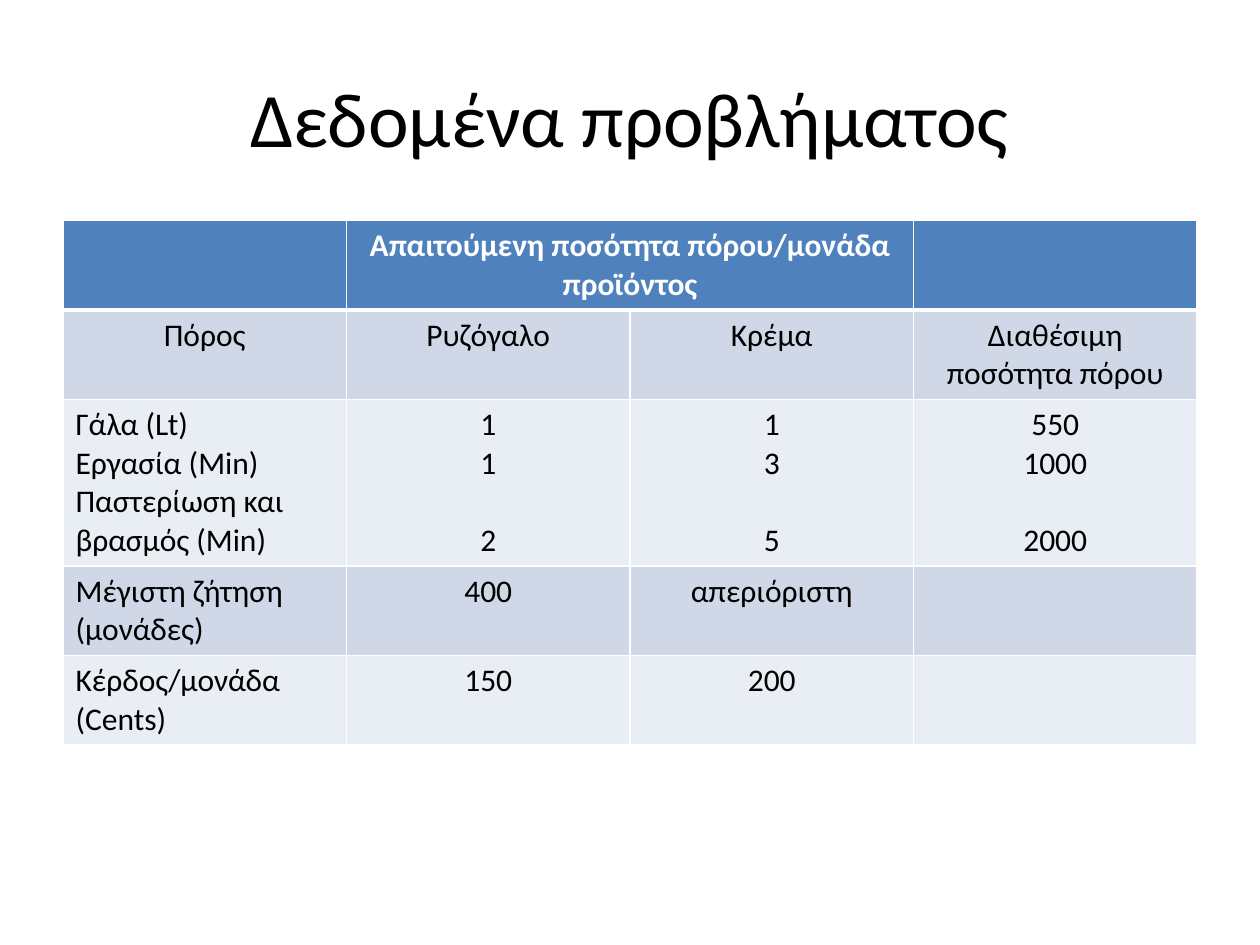
from dataclasses import dataclass

from lxml.etree import SubElement
from pptx import Presentation
from pptx.dml.color import RGBColor
from pptx.enum.text import MSO_ANCHOR, PP_ALIGN
from pptx.oxml.ns import qn
from pptx.util import Inches, Pt


@dataclass(frozen=True)
class Theme:
    font: str = "Calibri"
    title_size: int = 44
    body_size: int = 18
    line_gap: int = 22
    text: str = "000000"
    header_text: str = "FFFFFF"
    header_fill: str = "4F81BD"
    bands: tuple = ("D0D8E8", "E9EDF4")
    border: str = "FFFFFF"
    thin: int = 1
    thick: int = 3


class SlideBuilder:
    def __init__(self, prs, theme):
        self.theme = theme
        self.slide = prs.slides.add_slide(prs.slide_layouts[5])

    def add_run(self, p, text, size, color, bold=False):
        r = p.add_run()
        r.text = text
        r.font.name = self.theme.font
        r.font.size = Pt(size)
        r.font.bold = bold
        r.font.color.rgb = RGBColor.from_string(color)

    def title(self, text, left, top, width, height):
        sp = self.slide.shapes.title
        sp.left, sp.top = Inches(left), Inches(top)
        sp.width, sp.height = Inches(width), Inches(height)
        tf = sp.text_frame
        tf.vertical_anchor = MSO_ANCHOR.MIDDLE
        p = tf.paragraphs[0]
        p.alignment = PP_ALIGN.CENTER
        self.add_run(p, text, self.theme.title_size, self.theme.text)

    def border(self, cell, row):
        """Draw thin borders, with a thick line below the header row."""
        th = self.theme
        widths = {
            "L": th.thin,
            "R": th.thin,
            "T": th.thick if row == 1 else th.thin,
            "B": th.thick if row == 0 else th.thin,
        }
        tc_pr = cell._tc.get_or_add_tcPr()
        for side, width in widths.items():
            ln = SubElement(tc_pr, qn(f"a:ln{side}"), w=str(Pt(width)))
            fill = SubElement(ln, qn("a:solidFill"))
            SubElement(fill, qn("a:srgbClr"), val=th.border)

    def cell(self, cell, text, row, col):
        """Fill one cell; an empty line in the text becomes paragraph spacing."""
        th = self.theme
        header = row == 0
        self.border(cell, row)
        cell.fill.solid()
        color = th.header_fill if header else th.bands[(row - 1) % 2]
        cell.fill.fore_color.rgb = RGBColor.from_string(color)
        if not text:
            return
        tf = cell.text_frame
        p, gap = tf.paragraphs[0], 0
        for i, line in enumerate(text.split("\n")):
            if not line:
                gap += th.line_gap
                continue
            if i:
                p = tf.add_paragraph()
            left = col == 0 and row > 1
            p.alignment = PP_ALIGN.LEFT if left else PP_ALIGN.CENTER
            if gap:
                p.space_before = Pt(gap)
                gap = 0
            color = th.header_text if header else th.text
            self.add_run(p, line, th.body_size, color, header)

    def table(self, rows, left, top, width, row_height):
        frame = self.slide.shapes.add_table(
            len(rows), len(rows[0]), Inches(left), Inches(top),
            Inches(width), Inches(row_height * len(rows)))
        table = frame.table
        for i, row in enumerate(rows):
            for j, text in enumerate(row):
                self.cell(table.cell(i, j), text, i, j)
        return table


ROWS = [
    ["", "Απαιτούμενη ποσότητα πόρου/μονάδα προϊόντος", "", ""],
    ["Πόρος", "Ρυζόγαλο", "Κρέμα", "Διαθέσιμη ποσότητα πόρου"],
    ["Γάλα (Lt)\nΕργασία (Min)\nΠαστερίωση και βρασμός (Min)",
     "1\n1\n\n2", "1\n3\n\n5", "550\n1000\n\n2000"],
    ["Μέγιστη ζήτηση (μονάδες)", "400", "απεριόριστη", ""],
    ["Κέρδος/μονάδα\n(Cents)", "150", "200", ""],
]


def main():
    prs = Presentation()
    prs.slide_width, prs.slide_height = Inches(10), Inches(7.5)
    s = SlideBuilder(prs, Theme())
    s.title("Δεδομένα προβλήματος", 0.5, 0.3, 9, 1.25)
    table = s.table(ROWS, 0.5, 1.75, 9, 0.41)
    table.cell(0, 1).merge(table.cell(0, 2))
    prs.save("out.pptx")


if __name__ == "__main__":
    main()
